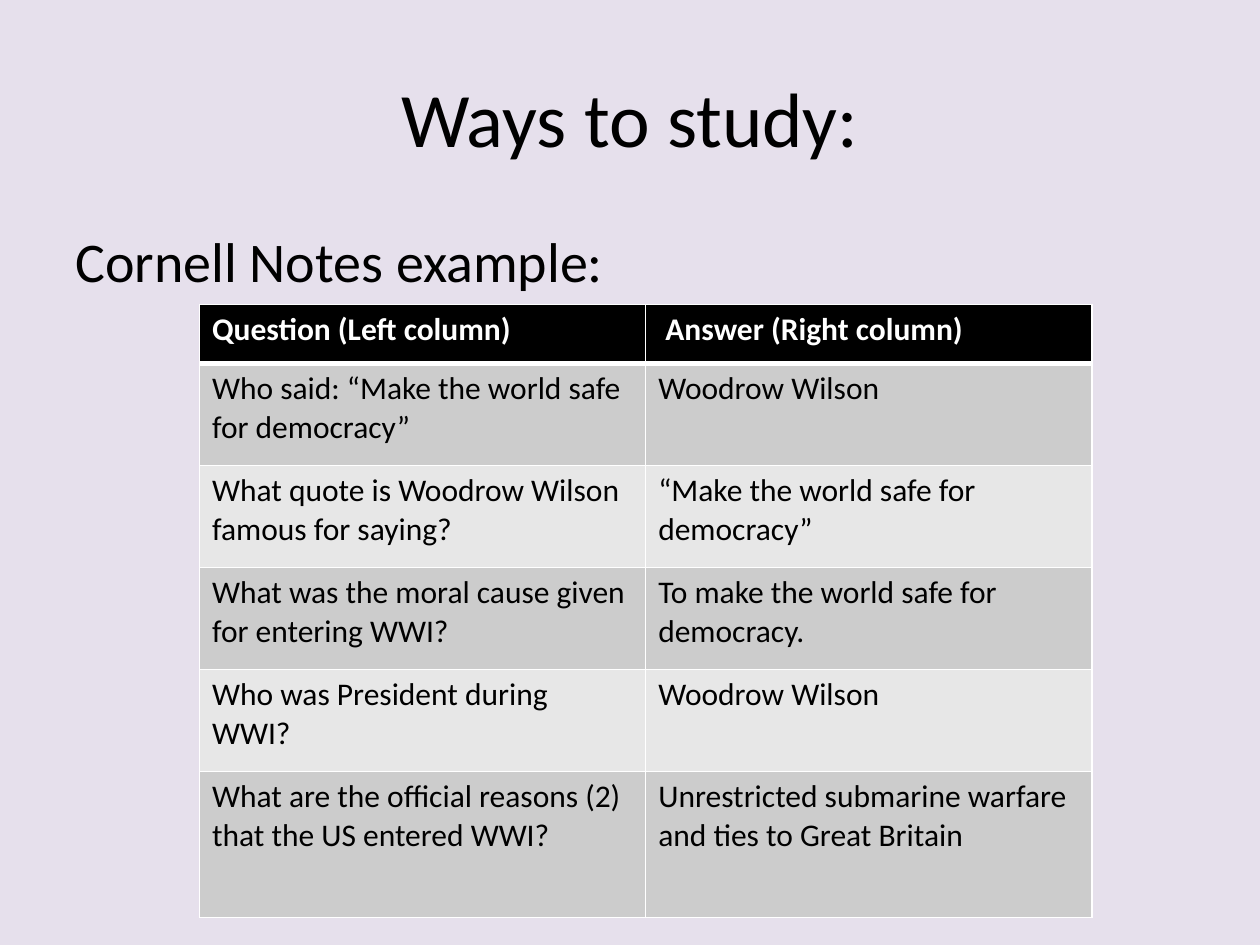
from lxml.etree import SubElement
from pptx import Presentation
from pptx.dml.color import RGBColor
from pptx.enum.text import MSO_ANCHOR as Anchor, PP_ALIGN as Align
from pptx.oxml.ns import qn
from pptx.util import Pt

LAVENDER = RGBColor(0xE6, 0xE0, 0xEC)
BLACK = RGBColor(0x00, 0x00, 0x00)
WHITE = RGBColor(0xFF, 0xFF, 0xFF)
DARK_BAND = RGBColor(0xCC, 0xCC, 0xCC)
LIGHT_BAND = RGBColor(0xE7, 0xE7, 0xE7)

NOTES = [
    ("Question (Left column)", " Answer (Right column)"),
    ("Who said: “Make the world safe for democracy”", "Woodrow Wilson"),
    ("What quote is Woodrow Wilson famous for saying?",
     "“Make the world safe for democracy”"),
    ("What was the moral cause given for entering WWI?",
     "To make the world safe for democracy."),
    ("Who was President during WWI?", "Woodrow Wilson"),
    ("What are the official reasons (2) that the US entered WWI?",
     "Unrestricted submarine warfare and ties to Great Britain"),
]
ROW_HEIGHTS = [33.8] + [58.3] * 4 + [83.5]


class StudySlide:
    font_name = "Calibri"

    def __init__(self, slide):
        self.slide = slide
        background = slide.background.fill
        background.solid()
        background.fore_color.rgb = LAVENDER

    def style(self, paragraph, size, color=BLACK, bold=False):
        font = paragraph.font
        font.name, font.size, font.bold = self.font_name, Pt(size), bold
        font.color.rgb = color

    def text(self, words, left, top, width, height, size,
             align=Align.LEFT, anchor=Anchor.TOP):
        box = self.slide.shapes.add_textbox(Pt(left), Pt(top), Pt(width), Pt(height))
        frame = box.text_frame
        frame.word_wrap = True
        frame.vertical_anchor = anchor
        paragraph = frame.paragraphs[0]
        paragraph.text = words
        paragraph.alignment = align
        self.style(paragraph, size)

    def borders(self, cell, top, bottom):
        """Draw white edges; top and bottom are widths in points."""
        properties = cell._tc.get_or_add_tcPr()
        for edge, width in (("L", 1), ("R", 1), ("T", top), ("B", bottom)):
            line = SubElement(properties, qn(f"a:ln{edge}"), w=str(Pt(width)))
            fill = SubElement(line, qn("a:solidFill"))
            SubElement(fill, qn("a:srgbClr"), val=str(WHITE))

    def table(self, rows, heights, left, top, width, size):
        """Add a table with a black header and banded rows below it."""
        table = self.slide.shapes.add_table(
            len(rows), len(rows[0]), Pt(left), Pt(top), Pt(width), Pt(sum(heights))).table
        for r, (row, height) in enumerate(zip(rows, heights)):
            table.rows[r].height = Pt(height)
            header = r == 0
            band = BLACK if header else DARK_BAND if r % 2 else LIGHT_BAND
            for c, words in enumerate(row):
                cell = table.cell(r, c)
                cell.text = words
                self.style(cell.text_frame.paragraphs[0], size,
                           WHITE if header else BLACK, header)
                self.borders(cell, 3 if r == 1 else 1, 3 if header else 1)
                cell.fill.solid()
                cell.fill.fore_color.rgb = band


def main():
    deck = Presentation()
    deck.slide_width, deck.slide_height = Pt(720), Pt(540)
    study = StudySlide(deck.slides.add_slide(deck.slide_layouts[6]))
    study.text("Ways to study:", 36, 21.6, 648, 90, 44, Align.CENTER, Anchor.MIDDLE)
    study.text("Cornell Notes example:", 36, 126, 648, 356.4, 32)
    study.table(NOTES, ROW_HEIGHTS, 114, 174, 510, 18)
    deck.save("out.pptx")


if __name__ == "__main__":
    main()
